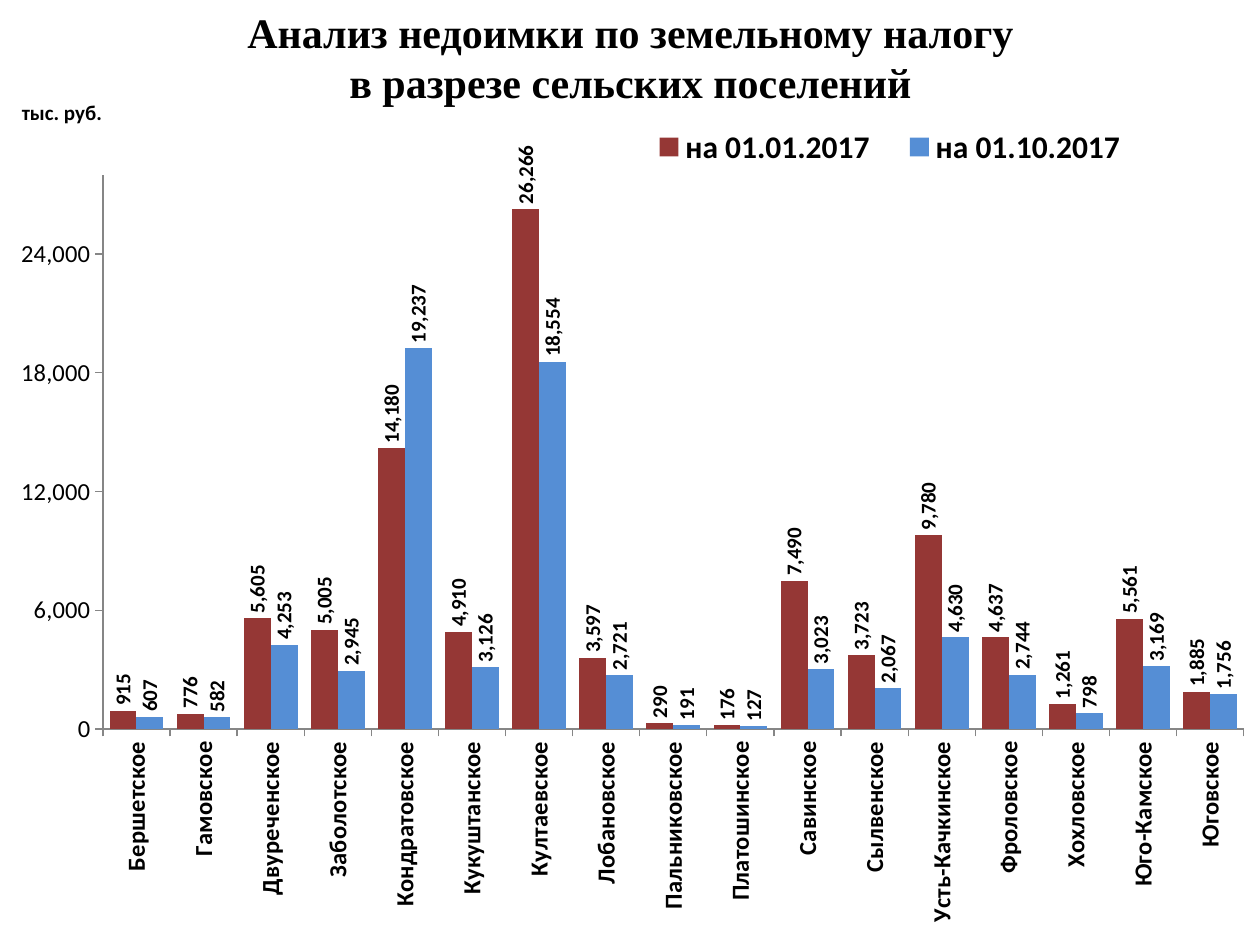
from dataclasses import dataclass

from lxml import etree
from pptx import Presentation
from pptx.chart.data import CategoryChartData
from pptx.dml.color import RGBColor
from pptx.enum import chart as charts, text
from pptx.oxml.ns import qn
from pptx.util import Pt

PX = 914400 / 126


@dataclass(frozen=True)
class Theme:
    ink: str = "000000"
    axis: str = "868686"
    series: tuple = ("953735", "558ED5")
    title_font: str = "Times New Roman"
    chart_font: str = "Calibri"
    title_size: int = 24
    legend_size: int = 18
    axis_size: int = 14
    label_size: int = 12


THEME = Theme()
UPRIGHT = "-5400000"
NUMBER_FORMAT = "#,##0"
SERIES_NAMES = ("на 01.01.2017", "на 01.10.2017")
ARREARS = {
    "Бершетское": (915, 607),
    "Гамовское": (776, 582),
    "Двуреченское": (5605, 4253),
    "Заболотское": (5005, 2945),
    "Кондратовское": (14180, 19237),
    "Кукуштанское": (4910, 3126),
    "Култаевское": (26266, 18554),
    "Лобановское": (3597, 2721),
    "Пальниковское": (290, 191),
    "Платошинское": (176, 127),
    "Савинское": (7490, 3023),
    "Сылвенское": (3723, 2067),
    "Усть-Качкинское": (9780, 4630),
    "Фроловское": (4637, 2744),
    "Хохловское": (1261, 798),
    "Юго-Камское": (5561, 3169),
    "Юговское": (1885, 1756),
}


def emu(*lengths):
    return [round(length * PX) for length in lengths]


def style_font(font, size, bold=False, name=THEME.chart_font):
    font.name, font.size, font.bold = name, Pt(size), bold
    font.color.rgb = RGBColor.from_string(THEME.ink)


def write_text(frame, content, *, size, bold=False, name=THEME.chart_font,
               align=text.PP_ALIGN.CENTER):
    paragraph = frame.paragraphs[0]
    paragraph.text = content
    paragraph.alignment = align
    for run in paragraph.runs:
        style_font(run.font, size, bold, name)


def place_part(element, chart_box, x, y, width=None, height=None, inner=False):
    """Fix a chart part at px offsets from the chart's corner."""
    for old in element.findall(qn("c:layout")):
        element.remove(old)
    layout = etree.Element(qn("c:layout"))
    manual = etree.SubElement(layout, qn("c:manualLayout"))
    settings = [("layoutTarget", "inner")] if inner else []
    settings += [("xMode", "edge"), ("yMode", "edge")]
    for tag, length, whole in (("x", x, chart_box[2]), ("y", y, chart_box[3]),
                               ("w", width, chart_box[2]), ("h", height, chart_box[3])):
        if length is not None:
            settings.append((tag, f"{length / whole:.4f}"))
    for tag, value in settings:
        etree.SubElement(manual, qn(f"c:{tag}")).set("val", value)
    overlay = element.find(qn("c:overlay"))
    if overlay is None:
        element.insert(0, layout)
    else:
        overlay.addprevious(layout)


def turn_text(element, angle):
    body = element.find(f".//{qn('a:bodyPr')}")
    body.set("rot", angle)
    body.set("vert", "horz")


def add_title(slide, box):
    frame = slide.shapes.add_textbox(*emu(*box)).text_frame
    frame.word_wrap = True
    frame.vertical_anchor = text.MSO_ANCHOR.MIDDLE
    write_text(frame, "Анализ недоимки по земельному налогу\vв разрезе сельских поселений",
               size=THEME.title_size, bold=True, name=THEME.title_font)


def format_axis(axis, bold):
    axis.has_major_gridlines = False
    axis.major_tick_mark = charts.XL_TICK_MARK.OUTSIDE
    axis.format.line.color.rgb = RGBColor.from_string(THEME.axis)
    style_font(axis.tick_labels.font, THEME.axis_size, bold)


def add_arrears_chart(slide, box):
    data = CategoryChartData(number_format=NUMBER_FORMAT)
    data.categories = list(ARREARS)
    for name, values in zip(SERIES_NAMES, zip(*ARREARS.values())):
        data.add_series(name, values)
    chart = slide.shapes.add_chart(
        charts.XL_CHART_TYPE.COLUMN_CLUSTERED, *emu(*box), data).chart
    chart.has_title = False
    style_font(chart.font, THEME.legend_size)

    # Columns and their upright values
    plot = chart.plots[0]
    plot.gap_width, plot.overlap, plot.vary_by_categories = 50, 0, False
    for series, color in zip(plot.series, THEME.series):
        series.format.fill.solid()
        series.format.fill.fore_color.rgb = RGBColor.from_string(color)
        labels = series.data_labels
        labels.show_value = True
        labels.number_format = NUMBER_FORMAT
        labels.number_format_is_linked = False
        labels.position = charts.XL_LABEL_POSITION.OUTSIDE_END
        style_font(labels.font, THEME.label_size, bold=True)
        turn_text(labels._element, UPRIGHT)
    place_part(chart._chartSpace.chart.plotArea, box, 88, 120, 1141, 554, inner=True)

    # Axes
    format_axis(chart.category_axis, bold=True)
    turn_text(chart.category_axis._element, UPRIGHT)
    value_axis = chart.value_axis
    format_axis(value_axis, bold=False)
    value_axis.minimum_scale, value_axis.maximum_scale = 0, 28000
    value_axis.major_unit = 6000
    value_axis.tick_labels.number_format = NUMBER_FORMAT
    value_axis.tick_labels.number_format_is_linked = False

    # Unit above the value axis
    unit = value_axis.axis_title
    write_text(unit.text_frame, "тыс. руб.", size=THEME.label_size, bold=True)
    turn_text(unit._element, "0")
    place_part(unit._element, box, 3, 39)

    # Legend
    chart.has_legend = True
    legend = chart.legend
    legend.position = charts.XL_LEGEND_POSITION.BOTTOM
    legend.include_in_layout = False
    style_font(legend.font, THEME.legend_size, bold=True)
    place_part(legend._element, box, 615, 71, 520, 42)


def main():
    presentation = Presentation()
    presentation.slide_width, presentation.slide_height = emu(1260, 945)
    slide = presentation.slides.add_slide(presentation.slide_layouts[6])
    add_title(slide, (25, 37, 1211, 39))
    add_arrears_chart(slide, (15, 55, 1230, 873))
    presentation.save("out.pptx")


if __name__ == "__main__":
    main()
